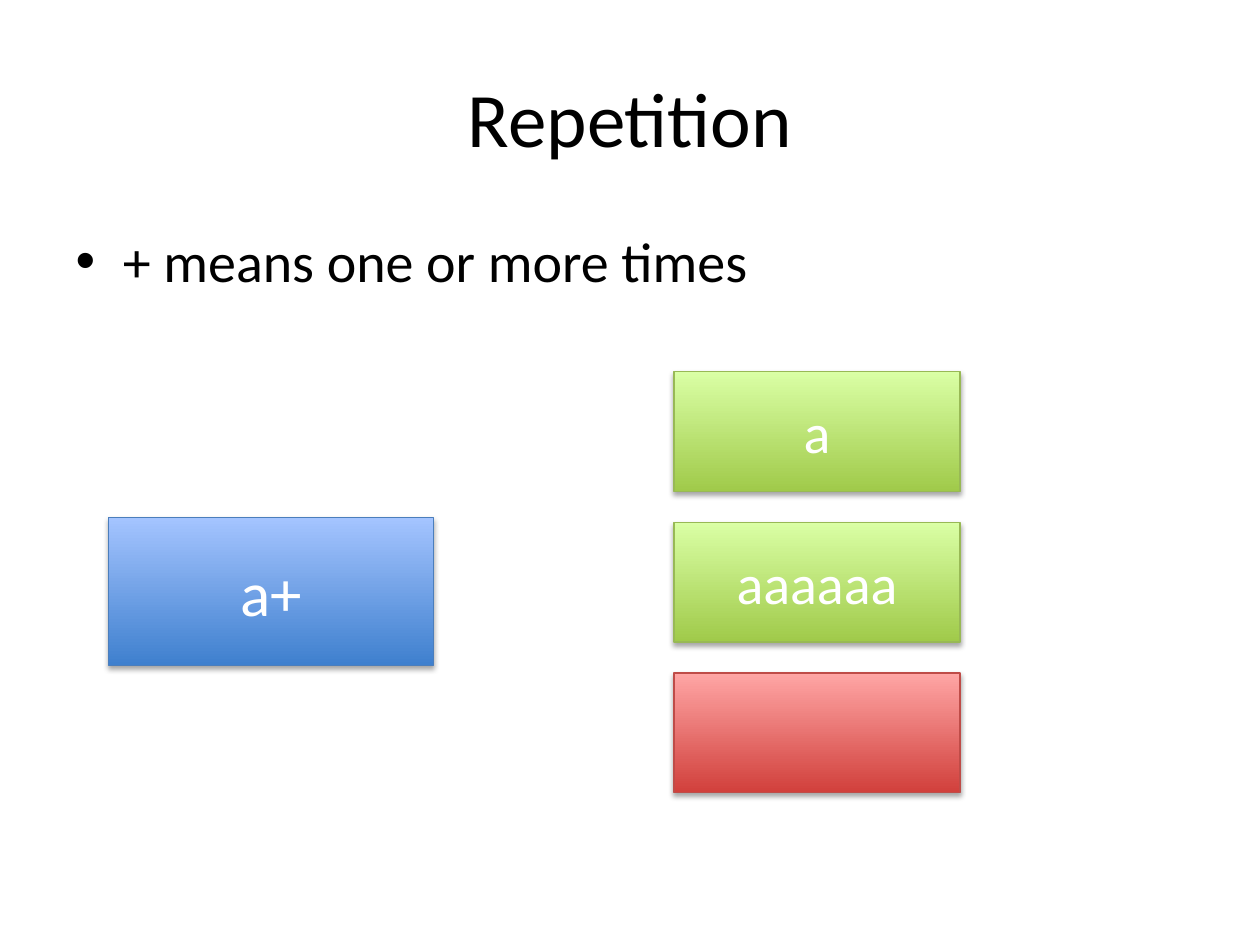
from lxml import etree
from pptx import Presentation
from pptx.dml.color import RGBColor
from pptx.enum.shapes import MSO_SHAPE
from pptx.enum.text import MSO_ANCHOR, PP_ALIGN
from pptx.oxml.ns import qn
from pptx.util import Inches, Pt

RECTANGLE = MSO_SHAPE.RECTANGLE
MIDDLE = MSO_ANCHOR.MIDDLE
CENTER = PP_ALIGN.CENTER

FONT = "Calibri"
BLACK, WHITE = "000000", "FFFFFF"
# Each palette holds the bottom colour, the top colour and the outline.
BLUE = ("3F80CE", "A4C4FF", "4B7EBC")
GREEN = ("A0CA4A", "DAFFA5", "98B955")
RED = ("D1403C", "FFA6A5", "BF4C48")

MATCH_TOP, MATCH_STEP = 2.95, 1.195


def color(hex_value):
    return RGBColor.from_string(hex_value)


def format_runs(para, size, hex_value):
    for span in para.runs:
        span.font.name = FONT
        span.font.size = Pt(size)
        span.font.color.rgb = color(hex_value)


def fill_placeholder(box, text, size, left, top, width, height):
    box.left, box.top = Inches(left), Inches(top)
    box.width, box.height = Inches(width), Inches(height)
    box.text_frame.text = text
    para = box.text_frame.paragraphs[0]
    format_runs(para, size, BLACK)
    return para


def add_shadow(box):
    """Put a soft shadow just below the box."""
    effects = etree.SubElement(box.element.spPr, qn("a:effectLst"))
    shadow = etree.SubElement(effects, qn("a:outerShdw"), blurRad=str(Pt(3.1)),
                              dist=str(Pt(1.8)), dir="5400000", rotWithShape="0")
    tone = etree.SubElement(shadow, qn("a:srgbClr"), val=BLACK)
    etree.SubElement(tone, qn("a:alpha"), val="35000")


def add_box(page, text, size, palette, left, top, width, height):
    box = page.shapes.add_shape(RECTANGLE, Inches(left), Inches(top),
                                Inches(width), Inches(height))
    bottom, upper, outline = palette
    box.fill.gradient()
    box.fill.gradient_angle = 90
    for stop, hex_value in zip(box.fill.gradient_stops, (bottom, upper)):
        stop.color.rgb = color(hex_value)
    box.line.color.rgb = color(outline)
    box.line.width = Pt(0.75)
    add_shadow(box)
    if text:
        box.text_frame.text = text
        box.text_frame.vertical_anchor = MIDDLE
        para = box.text_frame.paragraphs[0]
        para.alignment = CENTER
        format_runs(para, size, WHITE)


def main():
    deck = Presentation()
    deck.slide_width, deck.slide_height = Inches(10), Inches(7.5)
    page = deck.slides.add_slide(deck.slide_layouts[1])

    title = fill_placeholder(page.shapes.title, "Repetition", 44, 0.5, 0.3, 9, 1.25)
    title.alignment = CENTER
    fill_placeholder(page.placeholders[1], "+ means one or more times", 32,
                     0.5, 1.75, 9, 4.95)

    add_box(page, "a+", 36, BLUE, 0.86, 4.11, 2.58, 1.17)
    matches = [("a", GREEN), ("aaaaaa", GREEN), ("", RED)]
    for row, (text, palette) in enumerate(matches):
        add_box(page, text, 32, palette,
                5.35, MATCH_TOP + row * MATCH_STEP, 2.27, 0.95)

    deck.save("out.pptx")


if __name__ == "__main__":
    main()
